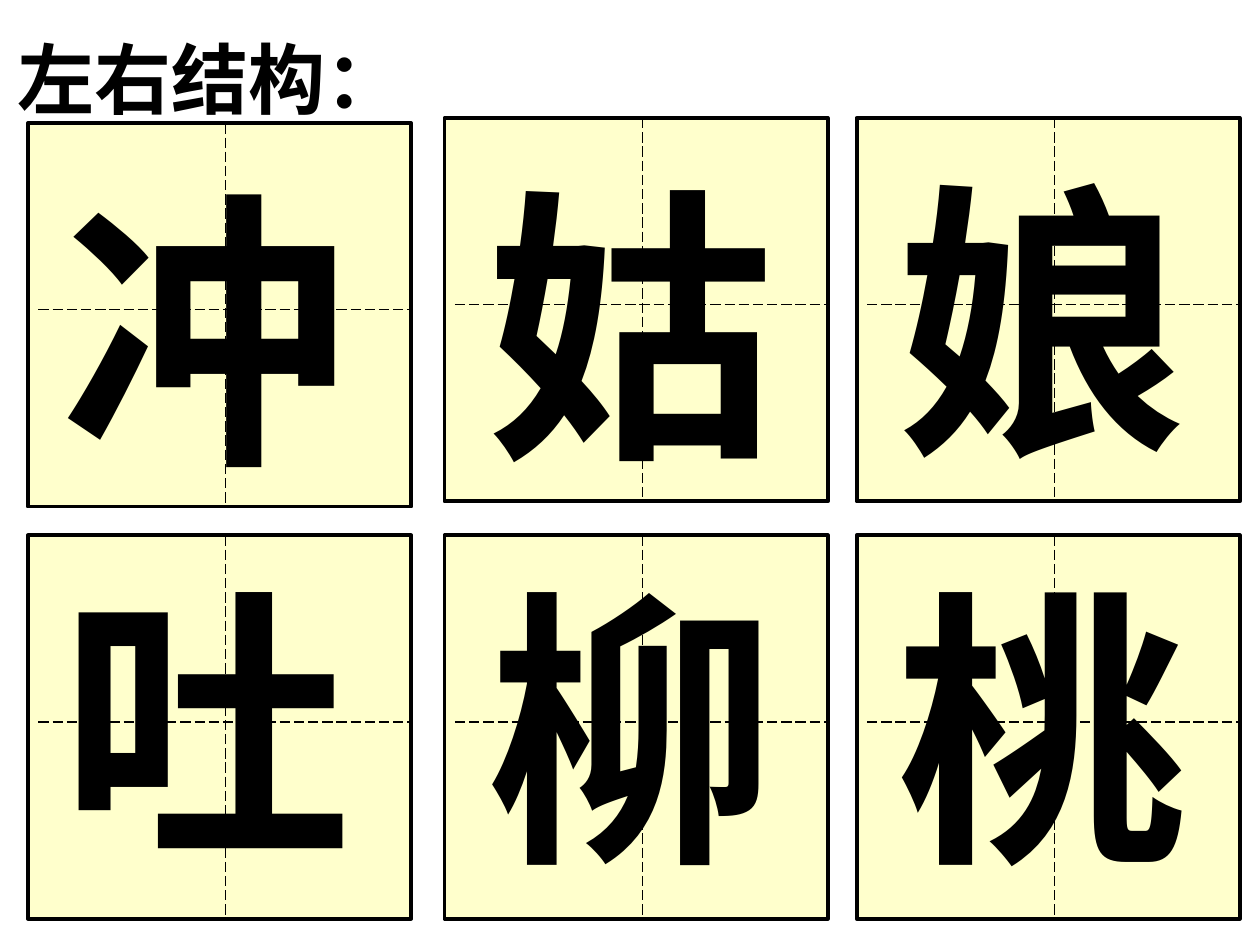
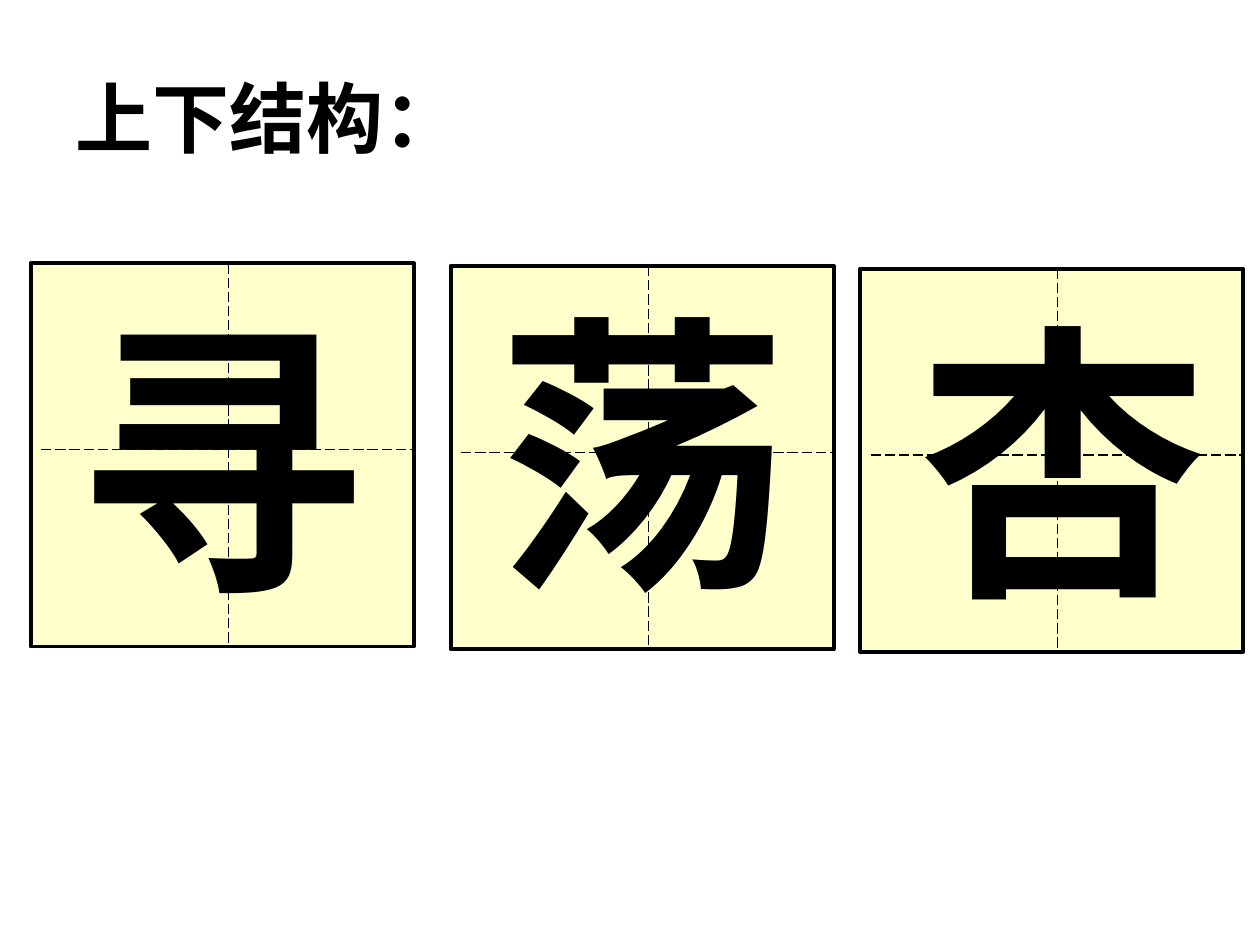
from pptx import Presentation
from pptx.dml.color import RGBColor
from pptx.enum.dml import MSO_LINE
from pptx.enum.shapes import MSO_CONNECTOR, MSO_SHAPE
from pptx.enum.text import MSO_ANCHOR, MSO_AUTO_SIZE, PP_ALIGN
from pptx.oxml.ns import qn
from pptx.util import Pt
from lxml import etree

BLACK = RGBColor(0x00, 0x00, 0x00)
CREAM = RGBColor(0xFF, 0xFF, 0xCC)
FONT = "Noto Sans CJK SC"

CELL = 219
GLYPH_WIDTH, GLYPH_HEIGHT = 214.5, 208.5
TITLE_WIDTH, TITLE_HEIGHT = 281, 90

# Each cell: character, cell left and top, character box offset from the cell
LEFT_RIGHT_CELLS = [
    ("冲", 16, 70.5, 11.5, 11),
    ("姑", 254, 67.5, 17, 11),
    ("娘", 489.5, 67.5, 15.5, 9),
    ("吐", 16, 306, 11.5, 0),
    ("柳", 254, 306, 17, 3),
    ("桃", 489.5, 306, 15.5, 3),
]
TOP_BOTTOM_CELLS = [
    ("寻", 17.5, 150.5, 18.5, 4.5),
    ("荡", 257.5, 152, 19.5, 0),
    ("杏", 491.5, 153.5, 26, 3.5),
]


def write_text(holder, text, size, color=BLACK, bold=True):
    frame = holder.text_frame
    frame.word_wrap = True
    frame.auto_size = MSO_AUTO_SIZE.NONE
    frame.vertical_anchor = MSO_ANCHOR.MIDDLE
    paragraph = frame.paragraphs[0]
    paragraph.alignment = PP_ALIGN.LEFT
    run = paragraph.add_run()
    run.text = text
    run.font.size = Pt(size)
    run.font.bold = bold
    run.font.color.rgb = color
    run.font.name = FONT
    east_asian = etree.SubElement(run.font._element, qn("a:ea"))
    east_asian.set("typeface", FONT)


def add_guide(slide, x1, y1, x2, y2):
    guide = slide.shapes.add_connector(
        MSO_CONNECTOR.STRAIGHT, Pt(x1), Pt(y1), Pt(x2), Pt(y2))
    guide.line.color.rgb = BLACK
    guide.line.width = Pt(0.75)
    guide.line.dash_style = MSO_LINE.LONG_DASH
    etree.SubElement(guide._element.spPr, qn("a:effectLst"))


def add_practice_cell(slide, left, top):
    """Draw a framed square with a dashed cross for one character."""
    square = slide.shapes.add_shape(
        MSO_SHAPE.RECTANGLE, Pt(left), Pt(top), Pt(CELL), Pt(CELL))
    square.shadow.inherit = False
    square.fill.solid()
    square.fill.fore_color.rgb = CREAM
    square.line.color.rgb = BLACK
    square.line.width = Pt(2.25)
    middle_x, middle_y = left + 113, top + 106.5
    add_guide(slide, left + 6, middle_y, left + CELL, middle_y)
    add_guide(slide, middle_x, top, middle_x, top + CELL)


def add_character(slide, character, left, top):
    glyph = slide.shapes.add_textbox(
        Pt(left), Pt(top), Pt(GLYPH_WIDTH), Pt(GLYPH_HEIGHT))
    write_text(glyph, character, 166)


def add_structure_slide(deck, heading, heading_left, heading_top, cells):
    slide = deck.slides.add_slide(deck.slide_layouts[5])
    title = slide.shapes.title
    title.left, title.top = Pt(heading_left), Pt(heading_top)
    title.width, title.height = Pt(TITLE_WIDTH), Pt(TITLE_HEIGHT)
    write_text(title, heading, 44)
    for character, left, top, dx, dy in cells:
        add_practice_cell(slide, left, top)
        add_character(slide, character, left + dx, top + dy)


def main():
    deck = Presentation()
    deck.slide_width, deck.slide_height = Pt(720), Pt(540)
    add_structure_slide(deck, "左右结构：", 3, -0.5, LEFT_RIGHT_CELLS)
    add_structure_slide(deck, "上下结构：", 36, 21.5, TOP_BOTTOM_CELLS)
    deck.save("out.pptx")


if __name__ == "__main__":
    main()
